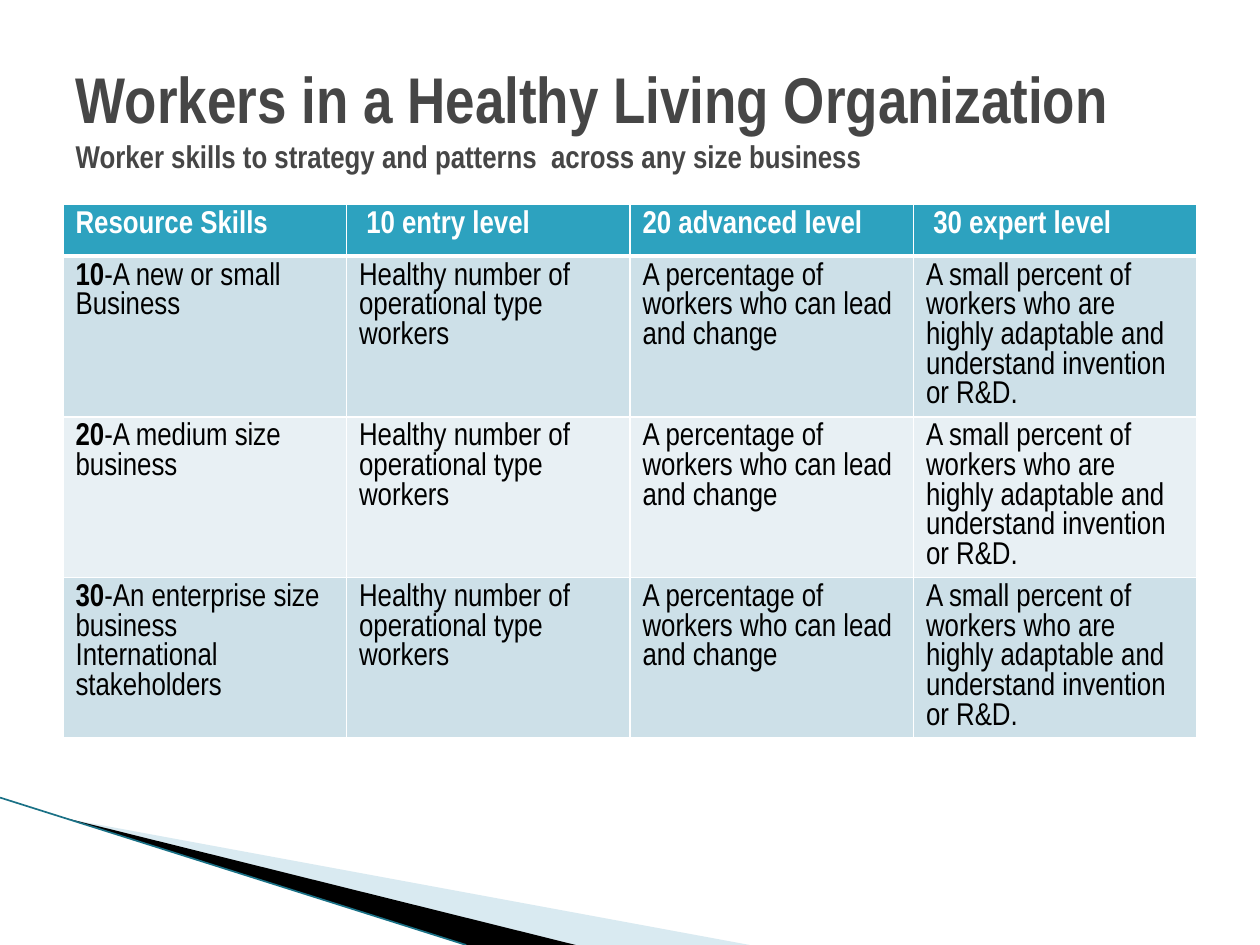
from lxml import etree
from pptx import Presentation
from pptx import util as u
from pptx.dml.color import RGBColor
from pptx.enum import shapes, text
from pptx.oxml.ns import qn

WHITE = RGBColor(0xFF, 0xFF, 0xFF)
BLACK = RGBColor(0, 0, 0)
GREY = RGBColor(0x46, 0x46, 0x46)
HEADER = RGBColor(0x2D, 0xA2, 0xBF)
BAND = RGBColor(0xCD, 0xE0, 0xE8)
PALE_BAND = RGBColor(0xE8, 0xF0, 0xF4)
WEDGE = RGBColor(0xA0, 0xCB, 0xDC)
EDGE = RGBColor(0x1A, 0x71, 0x86)

HEADINGS = ["Resource Skills", " 10 entry level", "20 advanced level", " 30 expert level"]
BUSINESSES = [
    ("10", ["-A new or small Business"]),
    ("20", ["-A medium size business"]),
    ("30", ["-An enterprise size business", "International stakeholders"]),
]
SKILLS = [
    "Healthy number of operational type workers",
    "A percentage of workers who can lead and change",
    "A small percent of workers who are highly adaptable and understand invention or R&D.",
]


def write(paragraph, words, size=18, bold=False, color=BLACK, font="Arial Narrow"):
    """Add a formatted run to a paragraph."""
    run = paragraph.add_run()
    run.text = words
    run.font.name, run.font.size, run.font.bold = font, u.Pt(size), bold
    run.font.color.rgb = color


class SlideBuilder:
    """Draw styled elements on one slide, placed by shares of its size."""

    def __init__(self, presentation):
        self.width, self.height = presentation.slide_width, presentation.slide_height
        self.slide = presentation.slides.add_slide(presentation.slide_layouts[5])

    def place(self, x, y):
        return round(x * self.width), round(y * self.height)

    def wedge(self, points, color, opacity=100):
        corners = [self.place(*point) for point in points]
        builder = self.slide.shapes.build_freeform(*corners[0])
        builder.add_line_segments(corners[1:], close=True)
        shape = builder.convert_to_shape()
        shape.shadow.inherit = False
        shape.fill.solid()
        shape.fill.fore_color.rgb = color
        shape.line.fill.background()
        if opacity < 100:
            fill = shape.fill._xPr.find(qn("a:solidFill"))
            etree.SubElement(fill[0], qn("a:alpha"), val=str(opacity * 1000))

    def line(self, start, end, color, weight):
        connector = self.slide.shapes.add_connector(
            shapes.MSO_CONNECTOR.STRAIGHT, *self.place(*start), *self.place(*end))
        connector.line.color.rgb = color
        connector.line.width = u.Pt(weight)
        etree.SubElement(connector._element.spPr, qn("a:effectLst"))

    def cell(self, cell, color, top=1, bottom=1):
        properties = cell._tc.get_or_add_tcPr()
        for side, weight in zip("LRTB", (1, 1, top, bottom)):
            border = etree.SubElement(properties, qn(f"a:ln{side}"), w=str(u.Pt(weight)))
            fill = etree.SubElement(border, qn("a:solidFill"))
            etree.SubElement(fill, qn("a:srgbClr"), val=str(WHITE))
        cell.fill.solid()
        cell.fill.fore_color.rgb = color
        return cell.text_frame

    def table(self, position, size, header_share):
        rows, columns = len(BUSINESSES) + 1, len(HEADINGS)
        table = self.slide.shapes.add_table(
            rows, columns, *self.place(*position), *self.place(*size)).table
        header_height = round(header_share * self.height)
        body_height = (round(size[1] * self.height) - header_height) // (rows - 1)
        for index, row in enumerate(table.rows):
            row.height = body_height if index else header_height
        for column, heading in enumerate(HEADINGS):
            frame = self.cell(table.cell(0, column), HEADER, bottom=3)
            write(frame.paragraphs[0], heading, bold=True, color=WHITE)
        for row, (number, lines) in enumerate(BUSINESSES, 1):
            color = BAND if row % 2 else PALE_BAND
            top = 3 if row == 1 else 1
            frame = self.cell(table.cell(row, 0), color, top)
            write(frame.paragraphs[0], number, bold=True)
            write(frame.paragraphs[0], lines[0])
            for words in lines[1:]:
                write(frame.add_paragraph(), words)
            for column, skill in enumerate(SKILLS, 1):
                frame = self.cell(table.cell(row, column), color, top)
                write(frame.paragraphs[0], skill)

    def title(self, position, size, heading, subheading):
        title = self.slide.shapes.title
        title.left, title.top = self.place(*position)
        title.width, title.height = self.place(*size)
        frame = title.text_frame
        frame.word_wrap = True
        frame.auto_size = text.MSO_AUTO_SIZE.NONE
        frame.vertical_anchor = text.MSO_ANCHOR.MIDDLE
        paragraph = frame.paragraphs[0]
        paragraph.alignment = text.PP_ALIGN.LEFT
        write(paragraph, heading, size=36.9, bold=True, color=GREY)
        paragraph.add_line_break()
        write(paragraph, subheading, bold=True, color=GREY)


def main():
    presentation = Presentation()
    presentation.slide_width, presentation.slide_height = u.Inches(10), u.Inches(7.5)
    builder = SlideBuilder(presentation)
    builder.wedge([(0.055, 0.867), (0.595, 1), (0.456, 1)], WEDGE, opacity=40)
    builder.wedge([(0.053, 0.866), (0.457, 1), (0.37, 1)], BLACK)
    builder.line((0, 0.844), (0.37, 1), EDGE, 0.95)
    builder.table((0.05, 0.216), (0.9, 0.563), header_share=0.055)
    builder.title((0.05, 0.04), (0.9, 0.167), "Workers in a Healthy Living Organization ",
                  "Worker skills to strategy and patterns  across any size business")
    presentation.save("out.pptx")


if __name__ == "__main__":
    main()
